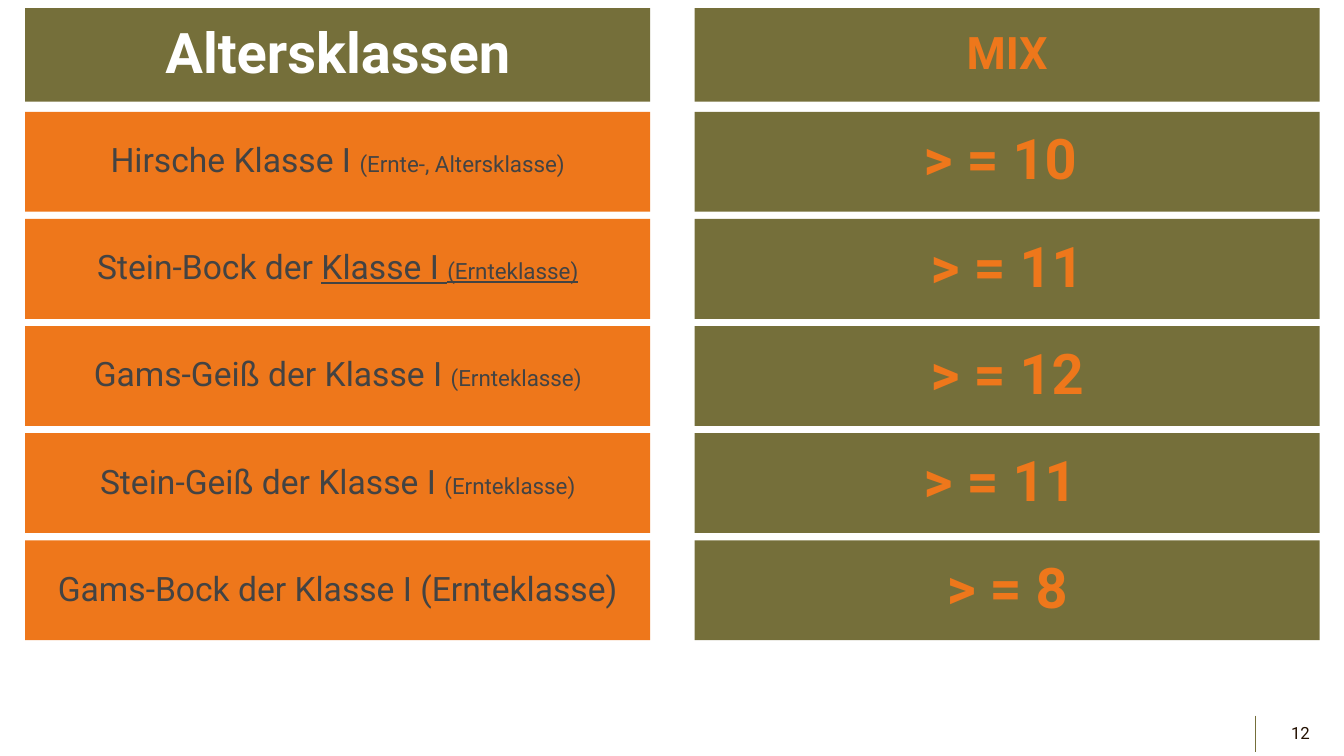
from dataclasses import dataclass

import pptx
import pptx.dml.color
import pptx.enum.shapes
import pptx.enum.text
import pptx.oxml.ns
import pptx.util
from lxml import etree
from pptx.util import Inches

OLIVE, ORANGE, WHITE, GREY, DARK = "756F3A", "EE771B", "FFFFFF", "434343", "231001"
LEFT_X, RIGHT_X, CELL_W = 0.25, 6.89, 6.2
HEADER_Y, HEADER_H = 0.08, 0.93
FIRST_ROW_Y, LAST_ROW_Y, ROW_H = 1.11, 5.36, 0.99
ALIGN = pptx.enum.text.PP_ALIGN


@dataclass
class Run:
    text: str
    size: int = 24
    color: str = GREY
    bold: bool = False
    underline: bool = False


@dataclass
class AgeClass:
    label: list[Run]
    minimum: str


HARVEST = "(Ernteklasse)"
AGE_CLASSES = [
    AgeClass([Run("Hirsche Klasse I "), Run("(Ernte-, Altersklasse)", 16)], "> = 10 "),
    AgeClass([Run("Stein-Bock der "), Run("Klasse I ", underline=True),
              Run(HARVEST, 16, underline=True)], "> = 11"),
    AgeClass([Run("Gams-Geiß der Klasse I "), Run(HARVEST, 16)], "> = 12"),
    AgeClass([Run("Stein-Geiß der Klasse I "), Run(HARVEST, 16)], "> = 11 "),
    AgeClass([Run(f"Gams-Bock der Klasse I {HARVEST}")], "> = 8"),
]


def rgb(color: str) -> pptx.dml.color.RGBColor:
    return pptx.dml.color.RGBColor.from_string(color)


def write(sp, runs: list[Run], align) -> None:
    tf = sp.text_frame
    tf.word_wrap = True
    tf.vertical_anchor = pptx.enum.text.MSO_ANCHOR.MIDDLE
    p = tf.paragraphs[0]
    p.alignment = align
    p.line_spacing = 0.9
    for run in runs:
        r = p.add_run()
        r.text = run.text
        r.font.name = "Roboto"
        r.font.size = pptx.util.Pt(run.size)
        r.font.bold = run.bold
        r.font.underline = run.underline
        r.font.color.rgb = rgb(run.color)


def add_cell(s, x: float, y: float, h: float, fill: str, runs: list[Run]) -> None:
    sp = s.shapes.add_shape(pptx.enum.shapes.MSO_SHAPE.RECTANGLE,
                            Inches(x), Inches(y), Inches(CELL_W), Inches(h))
    sp.shadow.inherit = False
    sp.fill.solid()
    sp.fill.fore_color.rgb = rgb(fill)
    sp.line.fill.background()
    write(sp, runs, ALIGN.CENTER)


def add_page_number(s, number: str) -> None:
    line = s.shapes.add_connector(pptx.enum.shapes.MSO_CONNECTOR.STRAIGHT,
                                  Inches(12.45), Inches(7.1), Inches(12.45), Inches(7.46))
    line.line.color.rgb = rgb(OLIVE)
    line.line.width = pptx.util.Pt(0.75)
    etree.SubElement(line._element.spPr, pptx.oxml.ns.qn("a:effectLst"))
    sp = s.shapes.add_textbox(Inches(12.58), Inches(7.08), Inches(0.51), Inches(0.4))
    write(sp, [Run(number, 12, DARK)], ALIGN.RIGHT)


def main() -> None:
    prs = pptx.Presentation()
    prs.slide_width, prs.slide_height = Inches(13.33), Inches(7.5)
    s = prs.slides.add_slide(prs.slide_layouts[6])
    add_page_number(s, "12")
    add_cell(s, LEFT_X, HEADER_Y, HEADER_H, OLIVE, [Run("Altersklassen", 40, WHITE, True)])
    add_cell(s, RIGHT_X, HEADER_Y, HEADER_H, OLIVE, [Run("MIX", 32, ORANGE, True)])
    pitch = (LAST_ROW_Y - FIRST_ROW_Y) / (len(AGE_CLASSES) - 1)
    for i, age_class in enumerate(AGE_CLASSES):
        y = FIRST_ROW_Y + i * pitch
        add_cell(s, LEFT_X, y, ROW_H, ORANGE, age_class.label)
        add_cell(s, RIGHT_X, y, ROW_H, OLIVE, [Run(age_class.minimum, 40, ORANGE, True)])
    prs.save("out.pptx")


if __name__ == "__main__":
    main()
